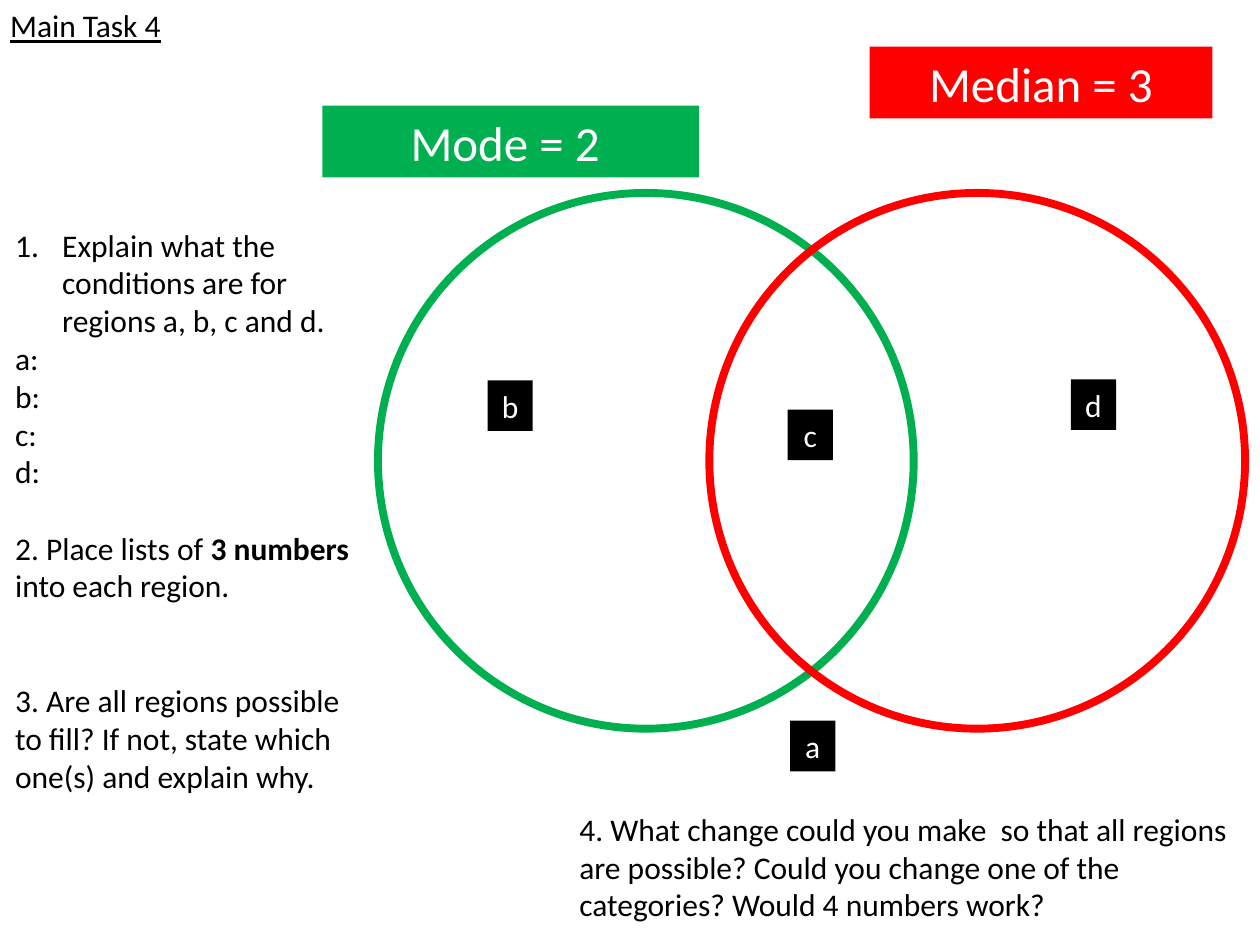
from dataclasses import dataclass

from lxml.etree import SubElement
from pptx import Presentation
from pptx.dml.color import RGBColor
from pptx.enum.shapes import MSO_SHAPE as Shape
from pptx.enum.text import MSO_ANCHOR as Anchor, MSO_AUTO_SIZE as AutoSize, PP_ALIGN as Align
from pptx.oxml.ns import qn
from pptx.util import Cm, Pt


@dataclass(frozen=True)
class Theme:
    """Colours, font and type sizes of the slide."""
    font: str = "Calibri"
    ink: RGBColor = RGBColor(0, 0, 0)
    paper: RGBColor = RGBColor(255, 255, 255)
    mode: RGBColor = RGBColor(0, 176, 80)
    median: RGBColor = RGBColor(255, 0, 0)
    text_size: int = 18
    banner_size: int = 28
    line_height: int = 22
    ring_width: float = 4.5


THEME = Theme()


def place(shape, left, top, width, height):
    """Move and size a shape in centimetres."""
    shape.left, shape.top, shape.width, shape.height = map(Cm, (left, top, width, height))


def add_run(paragraph, text, size=THEME.text_size, color=THEME.ink, bold=False, underline=False):
    """Append one formatted run to a paragraph."""
    run = paragraph.add_run()
    run.text = text
    font = run.font
    font.name, font.size, font.bold, font.underline = THEME.font, Pt(size), bold, underline
    font.color.rgb = color


def set_frame(frame, anchor=Anchor.TOP):
    """Wrap a text frame without resizing its text."""
    frame.word_wrap = True
    frame.auto_size = AutoSize.NONE
    frame.vertical_anchor = anchor


def set_list_style(paragraph, numbered):
    """Number a paragraph with a hanging indent, or clear its bullet."""
    properties = paragraph._p.get_or_add_pPr()
    indent = Cm(0.95) if numbered else 0
    properties.set("marL", str(indent))
    properties.set("indent", str(-indent))
    if numbered:
        SubElement(properties, qn("a:buFont"), typeface="+mj-lt")
        SubElement(properties, qn("a:buAutoNum"), type="arabicPeriod")
    else:
        SubElement(properties, qn("a:buNone"))


def add_filled_label(slide, text, box, color, size):
    """Add a solid rectangle with centred white text."""
    label = slide.shapes.add_shape(Shape.RECTANGLE, *map(Cm, box))
    label.shadow.inherit = False
    label.fill.solid()
    label.fill.fore_color.rgb = color
    label.line.fill.background()
    set_frame(label.text_frame, Anchor.MIDDLE)
    paragraph = label.text_frame.paragraphs[0]
    paragraph.alignment = Align.CENTER
    add_run(paragraph, text, size, THEME.paper)


def add_ring(slide, box, color):
    """Add one unfilled circle of the Venn diagram."""
    ring = slide.shapes.add_shape(Shape.OVAL, *map(Cm, box))
    ring.shadow.inherit = False
    ring.fill.background()
    ring.line.color.rgb = color
    ring.line.width = Pt(THEME.ring_width)


def fill_heading(slide, box):
    """Place the underlined task heading in the title placeholder."""
    heading = slide.shapes.title
    place(heading, *box)
    set_frame(heading.text_frame)
    paragraph = heading.text_frame.paragraphs[0]
    paragraph.alignment = Align.LEFT
    add_run(paragraph, "Main Task 4", underline=True)


def fill_questions(slide, box):
    """Place the first three questions in the body placeholder."""
    questions = slide.placeholders[1]
    place(questions, *box)
    frame = questions.text_frame
    set_frame(frame)
    items = [
        (0, ["Explain what the conditions are for regions a, b, c and d."]),
        *((0, [f"{region}:"]) for region in "abcd"),
        (1, ["2. Place lists of ", "3 numbers ", "into each region."]),
        (2, ["3. Are all regions possible to fill? If not, state which one(s) and explain why."]),
    ]
    for index, (lines_before, parts) in enumerate(items):
        paragraph = frame.add_paragraph() if index else frame.paragraphs[0]
        paragraph.alignment = Align.LEFT
        paragraph.space_before = Pt(lines_before * THEME.line_height)
        set_list_style(paragraph, numbered=index == 0)
        for part in parts:
            add_run(paragraph, part, bold=part == "3 numbers ")


def add_venn(slide, left, top, diameter):
    """Add the two banners, the overlapping rings and the region tags."""
    banners = [
        ("Median = 3", 11.03, 0, 6.91, THEME.median),
        ("Mode = 2 ", 0, 1.19, 7.59, THEME.mode),
    ]
    for text, x, y, width, color in banners:
        add_filled_label(slide, text, (left + x, top + y, width, 1.45), color, THEME.banner_size)
    for x, color in ((1.12, THEME.mode), (7.8, THEME.median)):
        add_ring(slide, (left + x, top + 2.95, diameter, diameter), color)
    tags = {"b": (3.33, 6.73), "d": (15.09, 6.71), "a": (9.43, 13.59), "c": (9.38, 7.32)}
    for region, (x, y) in tags.items():
        add_filled_label(slide, region, (left + x, top + y, 0.91, 1.02), THEME.ink, THEME.text_size)


def add_extension(slide, box):
    """Add the closing question below the diagram."""
    extension = slide.shapes.add_textbox(*map(Cm, box))
    set_frame(extension.text_frame)
    add_run(
        extension.text_frame.paragraphs[0],
        "4. What change could you make  so that all regions are possible? "
        "Could you change one of the categories? Would 4 numbers work?",
    )


def main():
    """Build and save the slide."""
    deck = Presentation()
    deck.slide_width, deck.slide_height = Cm(25.4), Cm(19.05)
    slide = deck.slides.add_slide(deck.slide_layouts[1])
    fill_heading(slide, (-0.05, 0, 9.25, 1.02))
    fill_questions(slide, (0.05, 4.42, 7.57, 13.34))
    add_venn(slide, 6.5, 0.94, 10.8)
    add_extension(slide, (11.43, 16.2, 13.67, 2.57))
    deck.save("out.pptx")


if __name__ == "__main__":
    main()
